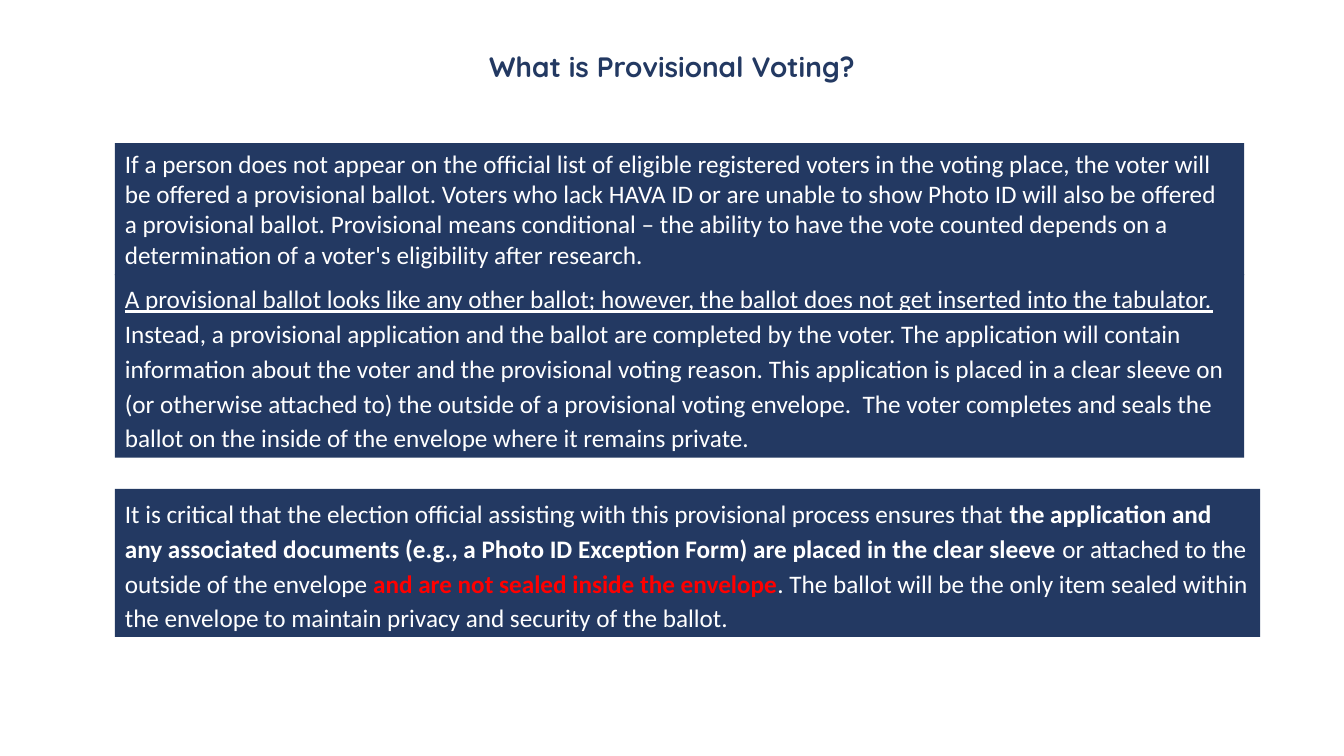
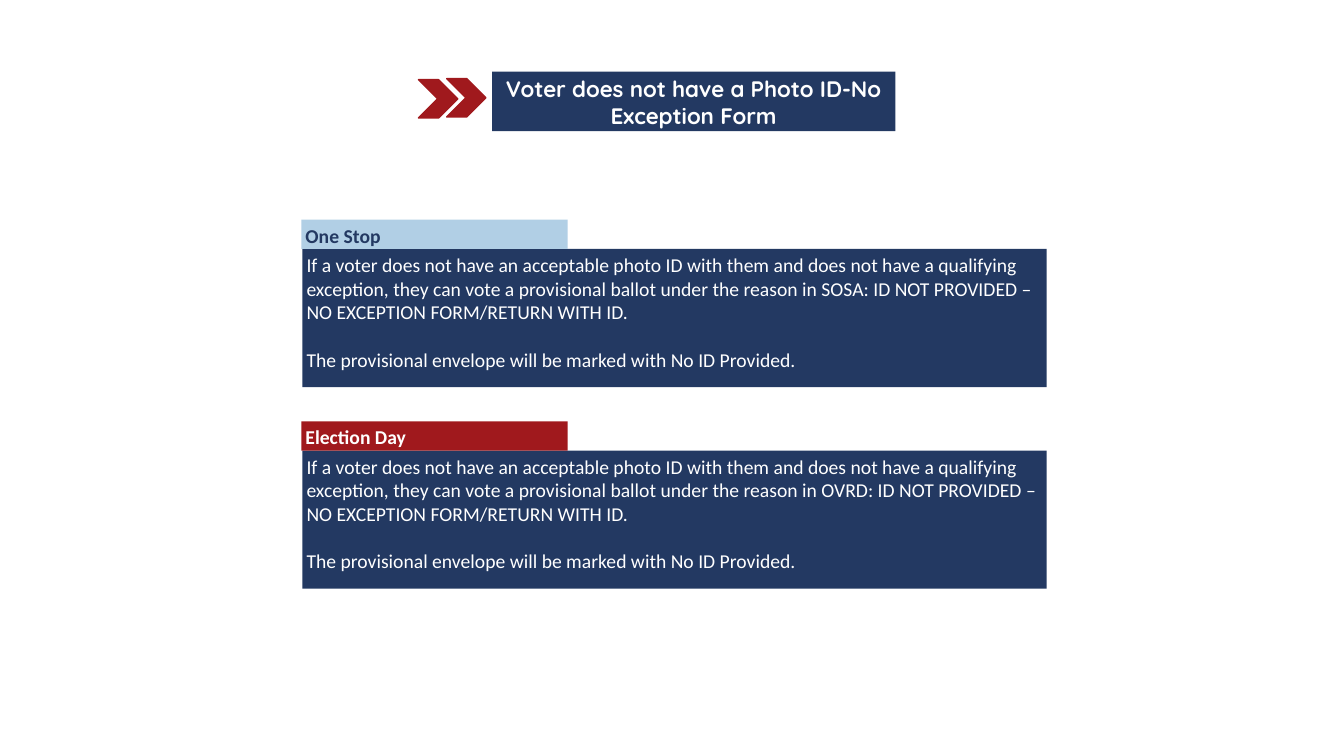
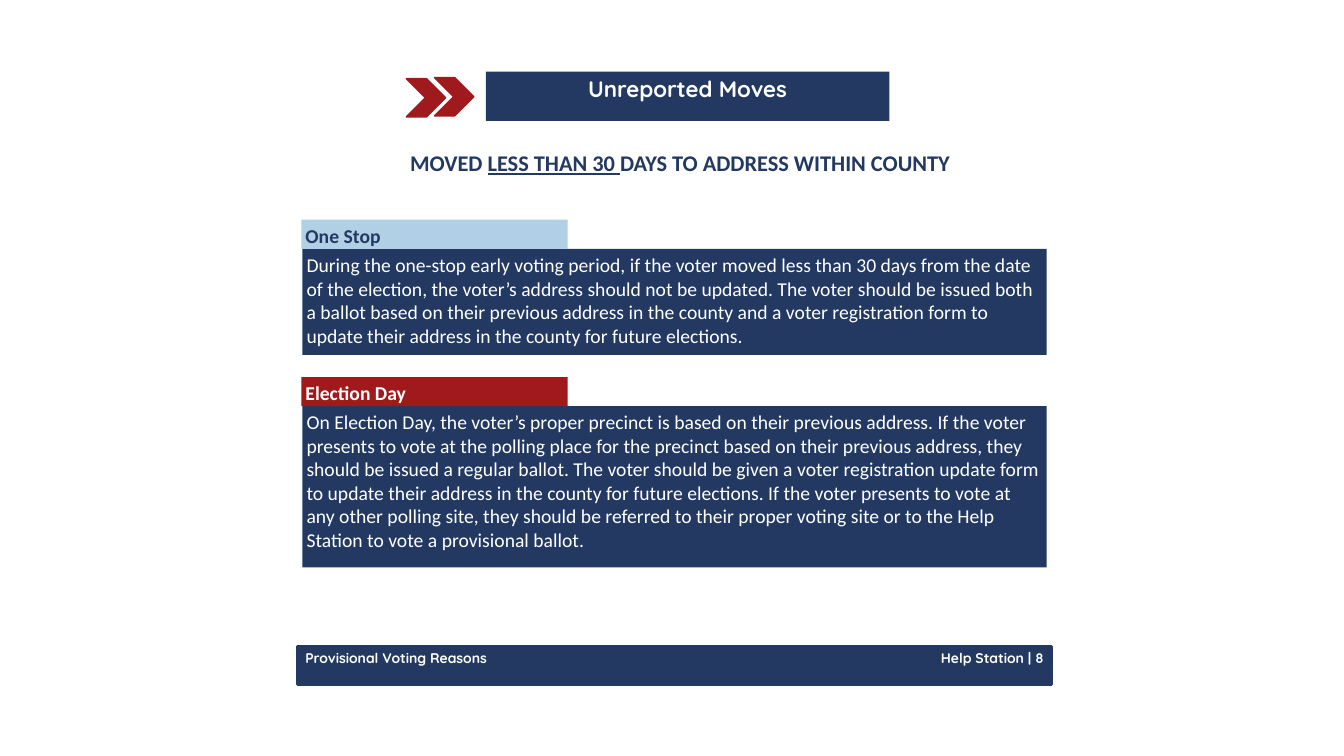
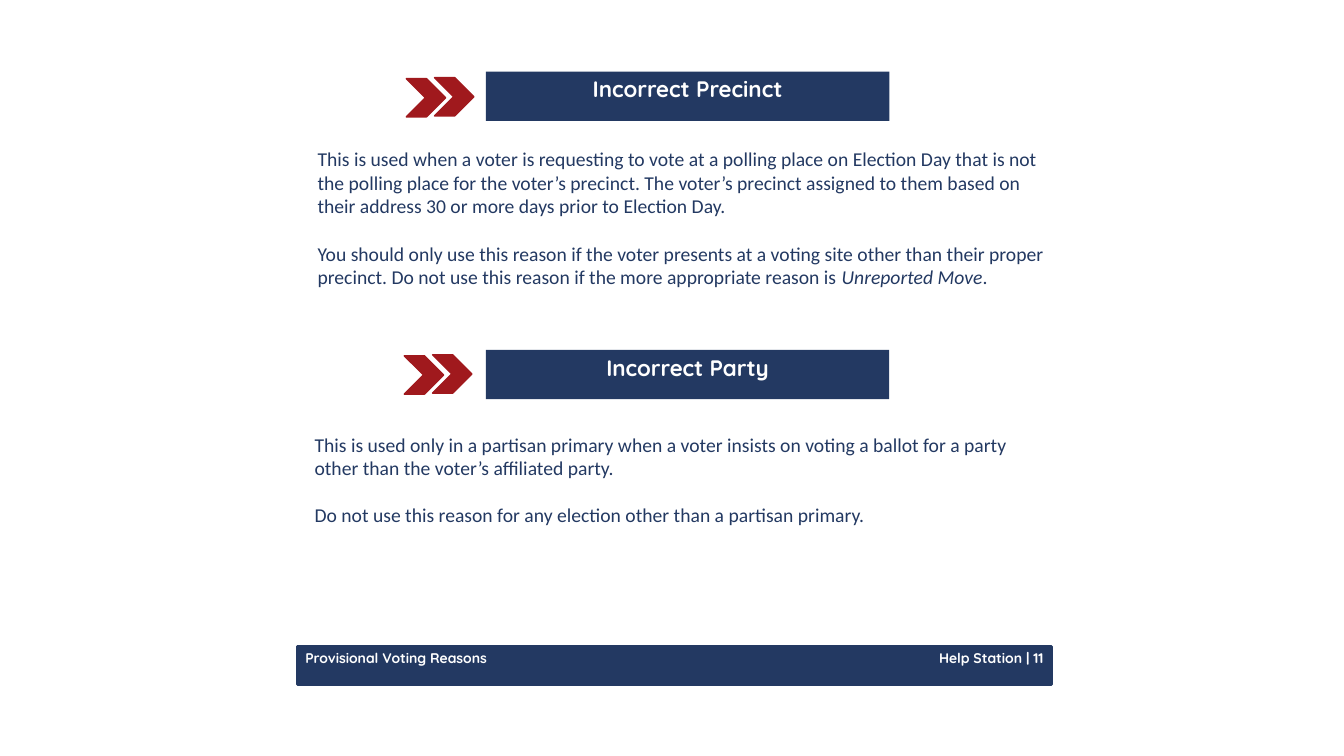
from dataclasses import dataclass, replace

from pptx import Presentation
from pptx import util as u
from pptx.dml import color
from pptx.enum import shapes, text

PX = 9144
NAVY, RED, SKY, WHITE, ALERT = "233962", "A0191D", "B1CFE5", "FFFFFF", "FF0000"
LEFT, CENTER, RIGHT = text.PP_ALIGN.LEFT, text.PP_ALIGN.CENTER, text.PP_ALIGN.RIGHT
TITLE_ONLY = 5


@dataclass(frozen=True)
class Style:
    """Look of the text in one box; gap is the space between paragraphs."""
    size: int
    ink: str = WHITE
    face: str = "Calibri"
    bold: bool = False
    align: text.PP_ALIGN = LEFT
    inset: tuple = (4, 4)
    gap: int = 17
    spacing: float = 1.0
    before: int = 0
    after: int = 0


HEADING = Style(20, NAVY, "Quicksand", True, CENTER)
BANNER = replace(HEADING, size=16, ink=WHITE)
FOOTER = replace(BANNER, size=10, align=LEFT)
PANEL = Style(14)
NOTE = replace(PANEL, ink=NAVY)
TAB = replace(PANEL, bold=True)
SUBTITLE = replace(NOTE, size=16, bold=True, align=CENTER)
INTRO = Style(18, inset=(10, 5))
LOOSE = replace(INTRO, spacing=1.15, before=5, after=10)


def rgb(value):
    """Turn a hex string into a colour."""
    return color.RGBColor.from_string(value)


def px(*lengths):
    """Turn px lengths into EMU."""
    return [u.Emu(length * PX) for length in lengths]


def paint(shape, fill, line=None, width=1):
    """Set a plain fill and an optional outline, with no shadow."""
    shape.shadow.inherit = False
    shape.fill.solid()
    shape.fill.fore_color.rgb = rgb(fill)
    if line:
        shape.line.color.rgb = rgb(line)
        shape.line.width = u.Pt(width)
    else:
        shape.line.fill.background()


def write(shape, style, paragraphs):
    """Write paragraphs, each a string or a list of (words, font changes)."""
    frame = shape.text_frame
    frame.word_wrap = True
    frame.auto_size = text.MSO_AUTO_SIZE.NONE
    frame.vertical_anchor = text.MSO_ANCHOR.TOP
    across, down = px(*style.inset)
    frame.margin_left = frame.margin_right = across
    frame.margin_top = frame.margin_bottom = down
    for index, content in enumerate(paragraphs):
        para = frame.add_paragraph() if index else frame.paragraphs[0]
        para.alignment = style.align
        para.line_spacing = style.spacing
        para.space_before = u.Pt(style.gap if index else style.before)
        para.space_after = u.Pt(style.after)
        para.font.size, para.font.name = u.Pt(style.size), style.face
        para.font.bold = style.bold
        para.font.color.rgb = rgb(style.ink)
        for words, changes in [(content, {})] if isinstance(content, str) else content:
            span = para.add_run()
            span.text = words
            for name, value in changes.items():
                if name == "ink":
                    span.font.color.rgb = rgb(value)
                else:
                    setattr(span.font, name, value)


def add_label(page, at, style, *paragraphs):
    """Add text without a fill."""
    write(page.shapes.add_textbox(*px(*at)), style, paragraphs)


def add_block(page, at, fill, style, *paragraphs):
    """Add a filled rectangle with text."""
    box = page.shapes.add_shape(shapes.MSO_SHAPE.RECTANGLE, *px(*at))
    paint(box, fill)
    write(box, style, paragraphs)


def set_title(page, at, style, words, fill=None):
    """Move, format and fill the title placeholder."""
    title = page.shapes.title
    title.left, title.top, title.width, title.height = px(*at)
    if fill:
        paint(title, fill)
    write(title, style, [words])


def add_chevrons(page, left, top):
    """Add the grouped pair of red chevrons."""
    group = page.shapes.add_group_shape()
    for x, y in ((left + 28, top - 1), (left, top)):
        paint(group.shapes.add_shape(shapes.MSO_SHAPE.CHEVRON, *px(x, y, 39, 38)), RED, RED)


def add_section(page, top, height, name, fill, ink, *paragraphs):
    """Add a coloured tab with a navy panel below it."""
    add_block(page, (300, top + 29, 738, height), NAVY, PANEL, *paragraphs)
    add_block(page, (299, top, 264, 29), fill, replace(TAB, ink=ink), name)


def add_sections(page, one_stop, election_day):
    """Add both voting periods, each given as top, height and paragraphs."""
    add_section(page, *one_stop[:2], "One Stop", SKY, NAVY, *one_stop[2:])
    add_section(page, *election_day[:2], "Election Day", RED, WHITE, *election_day[2:])


def add_footer(page, number):
    """Add the footer band with its two labels."""
    band = page.shapes.add_shape(shapes.MSO_SHAPE.RECTANGLE, *px(295, 641, 748, 38))
    paint(band, NAVY, NAVY, 2)
    add_label(page, (422, 640, 617, 39), replace(FOOTER, align=RIGHT), f"Help Station | {number}")
    add_label(page, (293, 639, 498, 27), replace(FOOTER, inset=(10, 5)), "Provisional Voting Reasons")


def build_definition(page):
    """Explain provisional voting."""
    set_title(page, (309, 45, 715, 43), HEADING, "What is Provisional Voting?")
    add_block(
        page, (114, 142, 1120, 131), NAVY, INTRO,
        "If a person does not appear on the official list of eligible registered voters in the "
        "voting place, the voter will be offered a provisional ballot. Voters who lack HAVA ID or "
        "are unable to show Photo ID will also be offered a provisional ballot. Provisional means "
        "conditional – the ability to have the vote counted depends on a determination of a "
        "voter's eligibility after research.")
    add_block(page, (114, 272, 1120, 182), NAVY, LOOSE, [
        ("A provisional ballot looks like any other ballot; however, the ballot does not get "
         "inserted into the tabulator. ", {"underline": True}),
        ("Instead, a provisional application and the ballot are completed by the voter. The "
         "application will contain information about the voter and the provisional voting reason. "
         "This application is placed in a clear sleeve on (or otherwise attached to) the outside "
         "of a provisional voting envelope.  The voter completes and seals the ballot on the "
         "inside of the envelope where it remains private.", {})])
    add_block(page, (114, 485, 1136, 147), NAVY, LOOSE, [
        ("It is critical that the election official assisting with this provisional process "
         "ensures that ", {}),
        ("the application and any associated documents (e.g., a Photo ID Exception Form) are "
         "placed in the clear sleeve", {"bold": True}),
        (" or attached to the outside of the envelope ", {}),
        ("and are not sealed inside the envelope", {"bold": True, "ink": ALERT}),
        (". The ballot will be the only item sealed within the envelope to maintain privacy and "
         "security of the ballot.", {})])


def build_no_photo_id(page):
    """Cover voters with neither a photo ID nor an exception form."""
    set_title(page, (488, 71, 400, 59), BANNER,
              "Voter does not have a Photo ID-No Exception Form", NAVY)
    add_chevrons(page, 415, 79)
    rule = ("If a voter does not have an acceptable photo ID with them and does not have a "
            "qualifying exception, they can vote a provisional ballot under the reason in {}: "
            "ID NOT PROVIDED – NO EXCEPTION FORM/RETURN WITH ID.")
    marking = "The provisional envelope will be marked with No ID Provided."
    add_sections(page, (218, 137, rule.format("SOSA"), marking),
                 (418, 137, rule.format("OVRD"), marking))


def build_unreported_moves(page):
    """Cover recent moves within the county."""
    add_footer(page, 8)
    set_title(page, (482, 71, 400, 49), BANNER, "Unreported Moves", NAVY)
    add_chevrons(page, 403, 78)
    add_label(page, (306, 144, 737, 51), SUBTITLE, [
        ("MOVED ", {}), ("LESS THAN 30 ", {"underline": True}),
        ("DAYS TO ADDRESS WITHIN COUNTY", {})])
    add_sections(
        page,
        (218, 105,
         "During the one-stop early voting period, if the voter moved less than 30 days from the "
         "date of the election, the voter’s address should not be updated. The voter should be "
         "issued both a ballot based on their previous address in the county and a voter "
         "registration form to update their address in the county for future elections."),
        (374, 160,
         "On Election Day, the voter’s proper precinct is based on their previous address. If the "
         "voter presents to vote at the polling place for the precinct based on their previous "
         "address, they should be issued a regular ballot. The voter should be given a voter "
         "registration update form to update their address in the county for future elections. If "
         "the voter presents to vote at any other polling site, they should be referred to their "
         "proper voting site or to the Help Station to vote a provisional ballot."))


def build_incorrect_reasons(page):
    """Cover an incorrect precinct and an incorrect party."""
    add_footer(page, 11)
    set_title(page, (482, 71, 400, 49), BANNER, "Incorrect Precinct", NAVY)
    add_chevrons(page, 403, 78)
    add_label(
        page, (311, 142, 741, 163), NOTE,
        "This is used when a voter is requesting to vote at a polling place on Election Day that "
        "is not the polling place for the voter’s precinct. The voter’s precinct assigned to them "
        "based on their address 30 or more days prior to Election Day.",
        [("You should only use this reason if the voter presents at a voting site other than "
          "their proper precinct. Do not use this reason if the more appropriate reason is", {}),
         (" Unreported Move", {"italic": True}), (".", {})])
    add_block(page, (482, 347, 400, 49), NAVY, BANNER, "Incorrect Party")
    add_chevrons(page, 401, 353)
    add_label(
        page, (308, 425, 741, 110), NOTE,
        "This is used only in a partisan primary when a voter insists on voting a ballot for a "
        "party other than the voter’s affiliated party.",
        "Do not use this reason for any election other than a partisan primary.")


def main():
    """Build and save the deck."""
    deck = Presentation()
    deck.slide_width, deck.slide_height = px(1333, 750)
    for build in (build_definition, build_no_photo_id, build_unreported_moves,
                  build_incorrect_reasons):
        build(deck.slides.add_slide(deck.slide_layouts[TITLE_ONLY]))
    deck.save("out.pptx")


if __name__ == "__main__":
    main()
